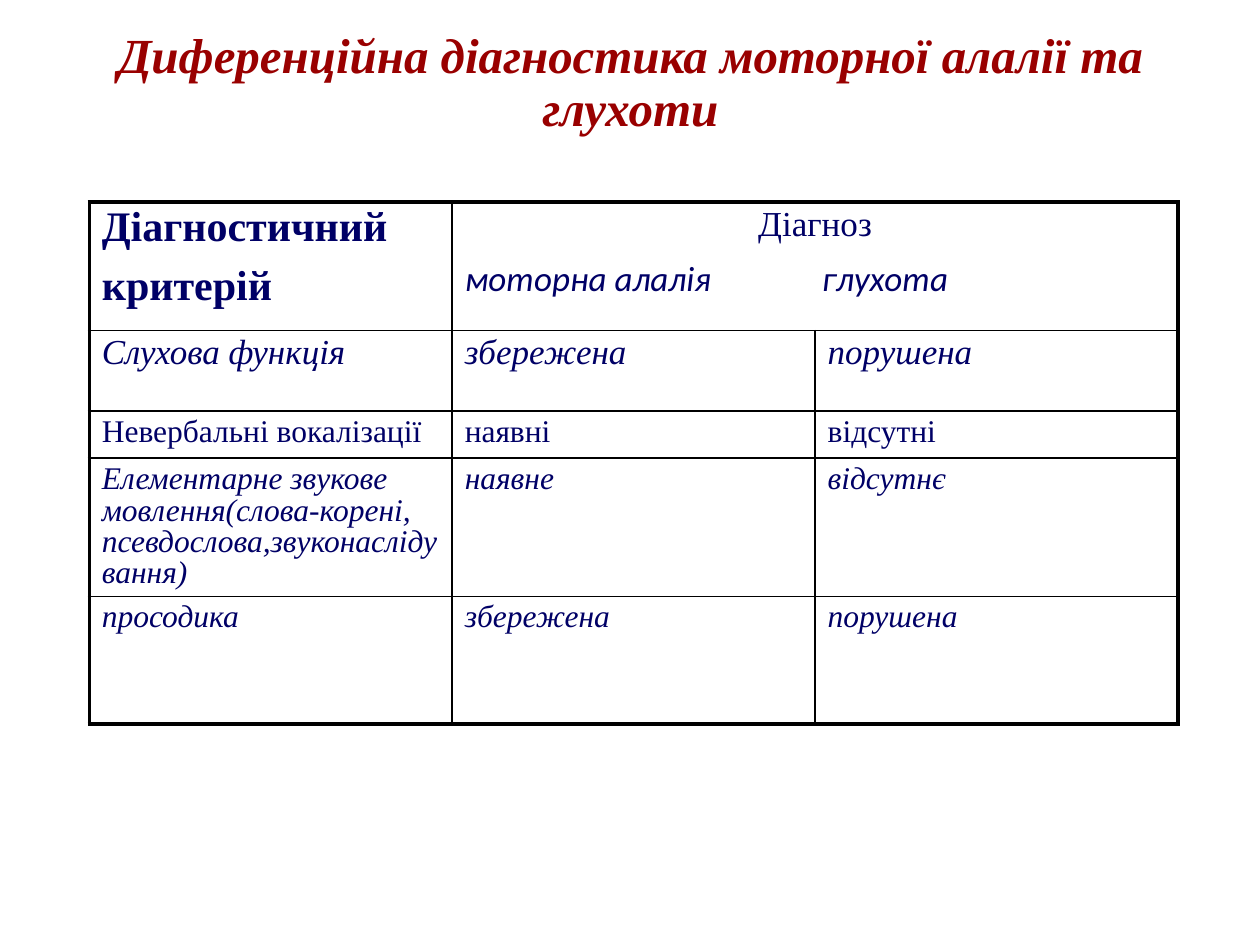
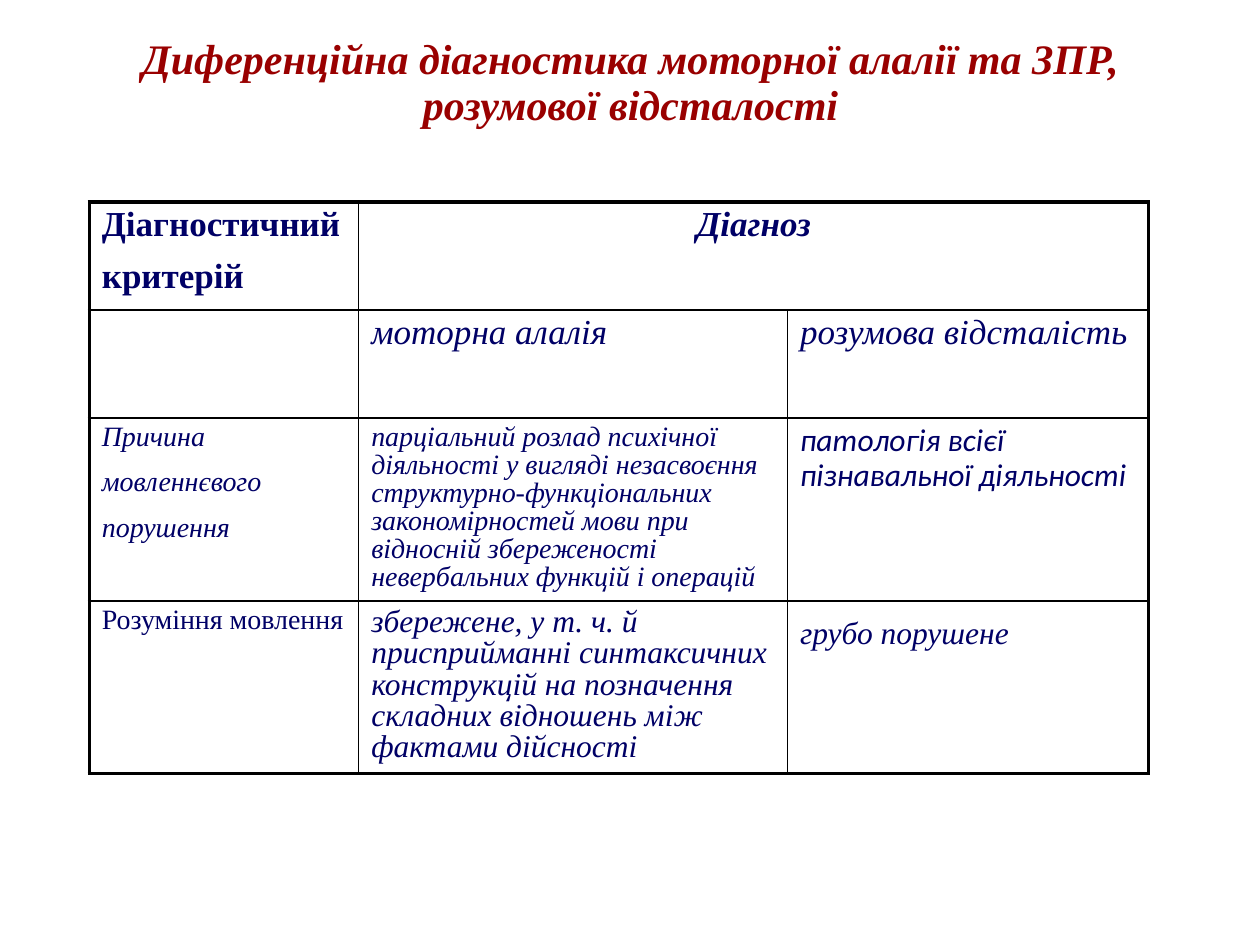
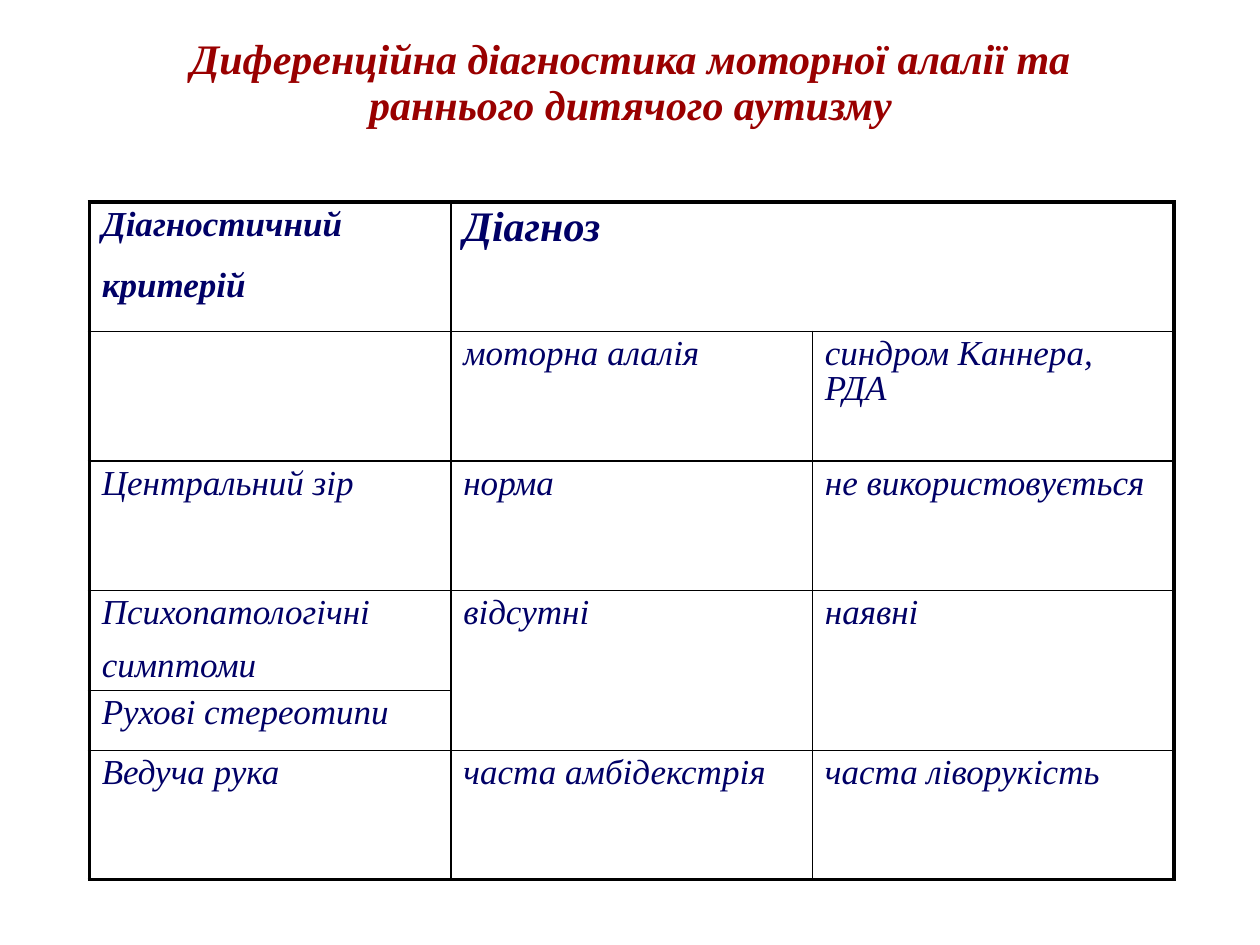
from dataclasses import dataclass

from lxml import etree
from pptx import Presentation
from pptx.dml.color import RGBColor
from pptx.enum.text import MSO_ANCHOR, MSO_AUTO_SIZE, PP_ALIGN
from pptx.oxml.ns import qn
from pptx.util import Pt

LEFT, CENTER = PP_ALIGN.LEFT, PP_ALIGN.CENTER
MIDDLE = MSO_ANCHOR.MIDDLE
NO_AUTOFIT = MSO_AUTO_SIZE.NONE


@dataclass(frozen=True)
class Theme:
    title_color: RGBColor = RGBColor(0x99, 0x00, 0x00)
    text_color: RGBColor = RGBColor(0x00, 0x00, 0x66)
    border_color: str = "000000"
    serif: str = "Times New Roman"
    sans: str = "Calibri"
    small: int = 16
    medium: int = 18
    large: int = 20
    heading: int = 24
    big_title: int = 28
    line_spacing: float = 0.9
    outer_border: float = 2.25
    inner_border: float = 1


THEME = Theme()

# Paragraph styles: font, size, bold, italic
HEAD_BIG = (THEME.serif, THEME.heading, True, False)
HEAD_BIG_ITALIC = (THEME.serif, THEME.heading, True, True)
HEAD = (THEME.serif, THEME.large, True, False)
HEAD_ITALIC = (THEME.serif, THEME.large, True, True)
PLAIN_LARGE = (THEME.serif, THEME.large, False, False)
PLAIN = (THEME.serif, THEME.medium, False, False)
PLAIN_SMALL = (THEME.serif, THEME.small, False, False)
ITALIC_LARGE = (THEME.serif, THEME.large, False, True)
ITALIC = (THEME.serif, THEME.medium, False, True)
ITALIC_SMALL = (THEME.serif, THEME.small, False, True)
SANS_LARGE = (THEME.sans, THEME.large, False, True)
SANS = (THEME.sans, THEME.medium, False, True)

# Content: each cell is a list of (text, style) paragraphs, None is merged away
DIAGNOSES = [
    {
        "title": "Диференційна діагностика моторної алалії та глухоти",
        "title_size": THEME.big_title,
        "columns": [207.4, 207.4, 207.4],
        "heights": [73.5, 46, 27, 79, 73],
        "merges": [(0, 1, 0, 2)],
        "centered": True,
        "rows": [
            [[("Діагностичний", HEAD_BIG), ("критерій", HEAD_BIG)],
             [("Діагноз", PLAIN_LARGE), ("моторна алалія\tглухота", SANS_LARGE)], None],
            [[("Слухова функція", ITALIC_LARGE)], [("збережена", ITALIC_LARGE)],
             [("порушена", ITALIC_LARGE)]],
            [[("Невербальні вокалізації", PLAIN)], [("наявні", PLAIN)], [("відсутні", PLAIN)]],
            [[("Елементарне звукове мовлення(слова-корені, "
               "псевдослова,звуконаслідування)", ITALIC)],
             [("наявне", ITALIC)], [("відсутнє", ITALIC)]],
            [[("просодика", ITALIC)], [("збережена", ITALIC)], [("порушена", ITALIC)]],
        ],
    },
    {
        "title": "Диференційна діагностика моторної алалії та ЗПР, розумової відсталості",
        "title_size": THEME.heading,
        "columns": [154, 245, 206.5],
        "heights": [61.7, 61.7, 104.6, 98.8],
        "merges": [(0, 1, 0, 2)],
        "centered": True,
        "top_margins": {(3, 2): 10.5},
        "rows": [
            [[("Діагностичний", HEAD), ("критерій", HEAD)], [("Діагноз", HEAD_ITALIC)], None],
            [[], [("моторна алалія", ITALIC_LARGE)], [("розумова відсталість", ITALIC_LARGE)]],
            [[("Причина", ITALIC_SMALL), ("мовленнєвого", ITALIC_SMALL),
              ("порушення", ITALIC_SMALL)],
             [("парціальний розлад психічної діяльності у вигляді незасвоєння "
               "структурно-функціональних закономірностей мови при відносній "
               "збереженості невербальних функцій і операцій", ITALIC_SMALL)],
             [("патологія всієї пізнавальної діяльності", SANS)]],
            [[("Розуміння мовлення", PLAIN_SMALL)],
             [("збережене, у т. ч. й присприйманні синтаксичних конструкцій на "
               "позначення складних відношень між фактами дійсності", ITALIC)],
             [("грубо порушене", ITALIC)]],
        ],
    },
    {
        "title": "Диференційна діагностика моторної алалії та раннього дитячого аутизму",
        "title_size": THEME.heading,
        "columns": [206.6, 206.6, 206.6],
        "heights": [74, 74, 74, 57.2, 34.2, 74],
        "merges": [(0, 1, 0, 2), (3, 1, 4, 1), (3, 2, 4, 2)],
        "centered": False,
        "paragraph_gap": {(0, 0): 15},
        "rows": [
            [[("Діагностичний", HEAD_ITALIC), ("критерій", HEAD_ITALIC)],
             [("Діагноз", HEAD_BIG_ITALIC)], None],
            [[], [("моторна алалія", ITALIC_LARGE)], [("синдром Каннера, РДА", ITALIC_LARGE)]],
            [[("Центральний зір", ITALIC_LARGE)], [("норма", ITALIC_LARGE)],
             [("не використовується", ITALIC_LARGE)]],
            [[("Психопатологічні", ITALIC_LARGE), ("симптоми", ITALIC_LARGE)],
             [("відсутні", ITALIC_LARGE)], [("наявні", ITALIC_LARGE)]],
            [[("Рухові стереотипи", ITALIC_LARGE)], None, None],
            [[("Ведуча рука", ITALIC_LARGE)], [("часта амбідекстрія", ITALIC_LARGE)],
             [("часта ліворукість", ITALIC_LARGE)]],
        ],
    },
]


def write_paragraph(paragraph, text, style, color, align):
    paragraph.alignment = align
    paragraph.line_spacing = THEME.line_spacing
    run = paragraph.add_run()
    run.text = text
    run.font.name, size, run.font.bold, run.font.italic = style
    run.font.size = Pt(size)
    run.font.color.rgb = color


def draw_border(cell, side, width):
    line = etree.SubElement(cell._tc.get_or_add_tcPr(), qn(f"a:ln{side}"), w=str(Pt(width)))
    fill = etree.SubElement(line, qn("a:solidFill"))
    etree.SubElement(fill, qn("a:srgbClr"), val=THEME.border_color)


prs = Presentation()
prs.slide_width, prs.slide_height = Pt(720), Pt(540)
title_only = prs.slide_layouts[5]

for diagnosis in DIAGNOSES:
    slide = prs.slides.add_slide(title_only)

    # Title
    title = slide.shapes.title
    title.left, title.top, title.width, title.height = Pt(51.8), Pt(9.4), Pt(617), Pt(77)
    title.text_frame.auto_size = NO_AUTOFIT
    title.text_frame.vertical_anchor = MIDDLE
    write_paragraph(title.text_frame.paragraphs[0], diagnosis["title"],
                    (THEME.serif, diagnosis["title_size"], True, True),
                    THEME.title_color, CENTER)

    # Table grid
    rows, columns, heights = diagnosis["rows"], diagnosis["columns"], diagnosis["heights"]
    table = slide.shapes.add_table(len(rows), len(columns), Pt(51), Pt(115.4),
                                   Pt(sum(columns)), Pt(sum(heights))).table
    table.first_row = table.horz_banding = False
    for column, width in zip(table.columns, columns):
        column.width = Pt(width)
    for row, height in zip(table.rows, heights):
        row.height = Pt(height)
    for top, left, bottom, right in diagnosis["merges"]:
        table.cell(top, left).merge(table.cell(bottom, right))

    for r, criterion in enumerate(rows):
        for c, content in enumerate(criterion):
            cell = table.cell(r, c)

            # Borders: heavy around the table, thin inside, none within a merged cell
            outer_sides = {"L": c == 0, "R": c + cell.span_width == len(columns),
                           "T": r == 0, "B": r + cell.span_height == len(rows)}
            if cell.is_spanned:
                outer_sides["R"] = c == len(columns) - 1
                outer_sides["B"] = r == len(rows) - 1
            for side, is_outer in outer_sides.items():
                if is_outer or not cell.is_spanned:
                    draw_border(cell, side, THEME.outer_border if is_outer else THEME.inner_border)
            cell.fill.background()

            # Cell text
            cell.margin_top = Pt(diagnosis.get("top_margins", {}).get((r, c), 3.6))
            gap = diagnosis.get("paragraph_gap", {}).get((r, c), 10)
            for i, (text, style) in enumerate(content or []):
                frame = cell.text_frame
                paragraph = frame.add_paragraph() if i else frame.paragraphs[0]
                is_centered = diagnosis["centered"] and (r, c, i) == (0, 1, 0)
                write_paragraph(paragraph, text, style, THEME.text_color,
                                CENTER if is_centered else LEFT)
                if i:
                    paragraph.space_before = Pt(gap)
                if "\t" in text:
                    tabs = etree.SubElement(paragraph._p.get_or_add_pPr(), qn("a:tabLst"))
                    etree.SubElement(tabs, qn("a:tab"), pos=str(Pt(204)), algn="l")

prs.save("out.pptx")
